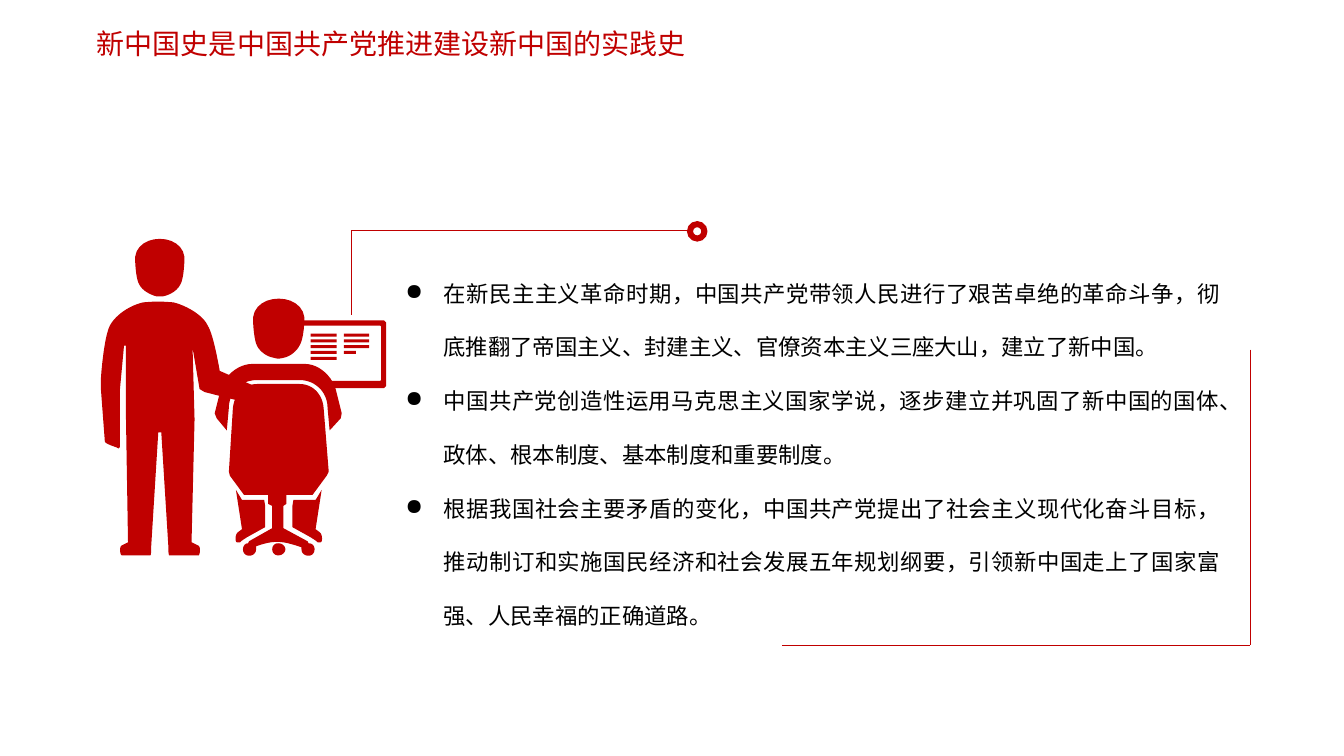
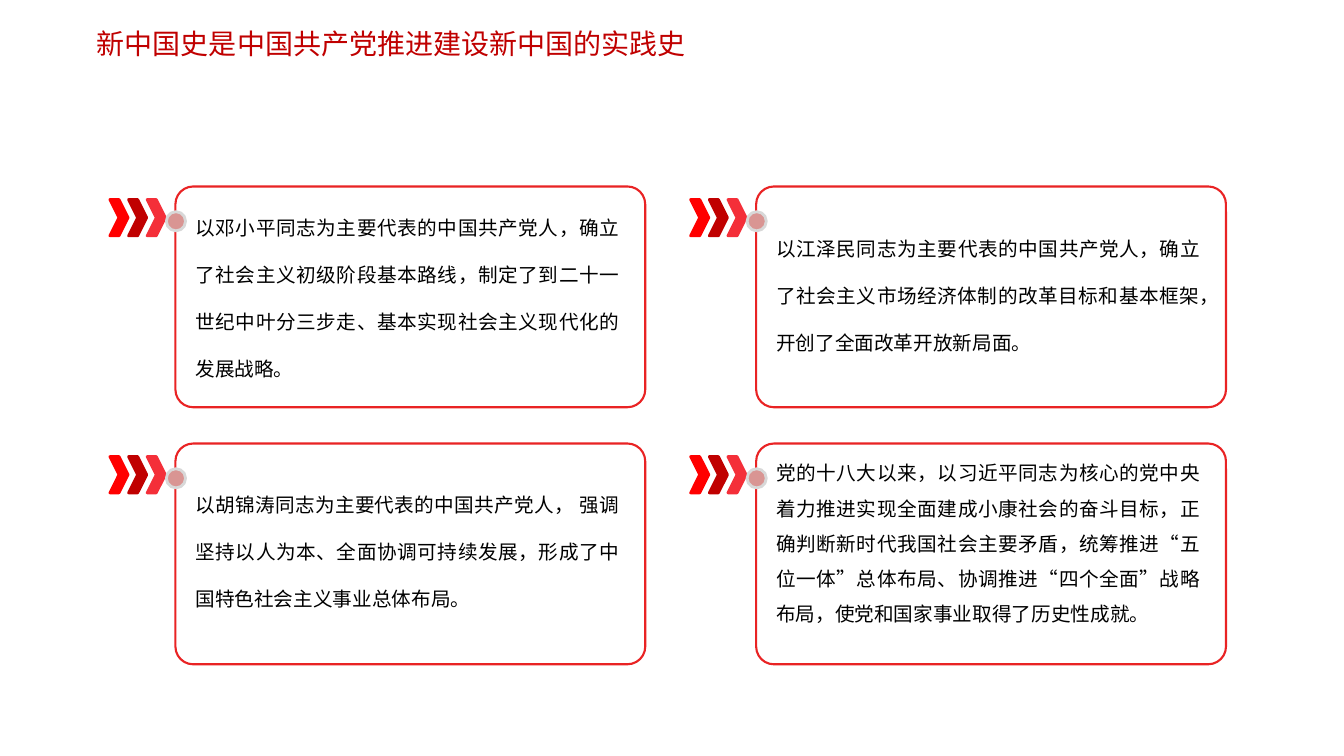
from lxml import etree
from pptx import Presentation
from pptx import util as u
from pptx.dml.color import RGBColor
from pptx.enum import shapes, text
from pptx.oxml import ns

FONT = "Noto Sans CJK SC"
RED, BLACK = "C00000", "000000"
TITLE = "新中国史是中国共产党推进建设新中国的实践史"
KIND = shapes.MSO_SHAPE

POINTS = [
    "在新民主主义革命时期，中国共产党带领人民进行了艰苦卓绝的革命斗争，彻底推翻了帝国主义、封建主义、官僚资本主义三座大山，建立了新中国。",
    "中国共产党创造性运用马克思主义国家学说，逐步建立并巩固了新中国的国体、政体、根本制度、基本制度和重要制度。",
    "根据我国社会主要矛盾的变化，中国共产党提出了社会主义现代化奋斗目标，推动制订和实施国民经济和社会发展五年规划纲要，引领新中国走上了国家富强、人民幸福的正确道路。",
]

CARDS = [
    ("以邓小平同志为主要代表的中国共产党人，确立了社会主义初级阶段基本路线，制定了到二十一世纪中叶分三步走、基本实现社会主义现代化的发展战略。", 0.01, 1.99, 2.0),
    ("以江泽民同志为主要代表的中国共产党人，确立了社会主义市场经济体制的改革目标和基本框架，开创了全面改革开放新局面。", 0.22, 1.51, 2.0),
    ("以胡锦涛同志为主要代表的中国共产党人， 强调坚持以人为本、全面协调可持续发展，形成了中国特色社会主义事业总体布局。", 0.21, 1.51, 2.0),
    ("党的十八大以来，以习近平同志为核心的党中央着力推进实现全面建成小康社会的奋斗目标，正确判断新时代我国社会主要矛盾，统筹推进“五位一体”总体布局、协调推进“四个全面”战略布局，使党和国家事业取得了历史性成就。", 0.01, 1.87, 1.5),
]


def block(x, y, w, h):
    return [(x, y), (x + w, y), (x + w, y + h), (x, y + h)]


def mirror(outline, mid):
    return [tuple(2 * mid - v if i % 2 == 0 else v for i, v in enumerate(step))
            for step in outline]


FRAME = [(190, 87), (281, 87), (283, 89), (283, 152), (281, 154), (217, 154),
         (214, 151, 211, 148, 207, 147), (277, 147), (278, 146), (278, 93),
         (277, 92), (194, 92), (193, 93), (193, 114), (188, 114), (188, 89)]
ROWS = [block(208, 100 + 5.75 * i, 26, 3) for i in range(5)]
ROWS += [block(241, 100 + 5.75 * i, w, 3) for i, w in enumerate((25, 25, 25, 12))]
SCREEN = [FRAME, block(188, 133, 5, 12), *ROWS]

SITTER = [
    [(151, 84), (154, 59, 199, 59, 202, 84), (202, 91, 201, 106, 197, 112),
     (194, 118, 187, 123, 181, 124), (177, 125, 175, 125, 172, 124),
     (165, 123, 158, 118, 155, 112), (152, 106, 151, 91, 151, 84)],
    [(202, 130), (217, 130, 231, 143, 234, 159), (239, 179), (238, 184), (227, 196),
     (225, 174), (225, 158, 213, 146, 197, 146), (155, 146),
     (139, 146, 127, 158, 127, 174), (125, 196), (115, 184), (113, 179), (118, 159),
     (121, 143, 135, 130, 151, 130)],
]

LEG = [(162, 265), (163, 271), (163, 292), (145, 302), (142, 304, 140, 305, 138, 307),
       (135, 307), (133, 307, 133, 299, 136, 297), (140, 294), (134, 255), (140, 265)]
LEGS = [LEG, mirror(LEG, 176.5)]

CHAIR = [
    [(197, 150), (211, 150, 220, 161, 221, 174), (226, 237), (224, 241), (210, 260),
     (184, 260), (184, 269), (181, 271), (181, 293), (205, 306), (206, 308),
     (210, 308, 212, 311, 212, 314), (212, 323, 199, 322, 199, 314), (199, 312),
     (179, 305, 171, 305, 154, 311), (154, 314), (154, 322, 141, 323, 141, 314),
     (141, 311, 143, 308, 146, 308), (147, 306), (170, 293), (170, 271), (166, 269),
     (166, 260), (142, 260), (128, 241), (127, 237), (131, 174),
     (132, 161, 142, 150, 155, 150)],
    [(176, 308), (172, 308, 170, 311, 170, 314), (170, 317, 172, 320, 176, 320),
     (180, 320, 183, 317, 183, 314), (183, 311, 180, 308, 176, 308)],
]

STANDER = [
    [(34, 24), (34, 31, 35, 46, 38, 51), (41, 57, 48, 61, 55, 63),
     (58, 63, 59, 63, 62, 63), (70, 61, 76, 57, 79, 51), (82, 46, 83, 31, 83, 24),
     (80, 0, 37, 0, 34, 24)],
    [(98, 155), (103, 158), (150, 170), (152, 171, 161, 158, 157, 154), (118, 137),
     (115, 121, 111, 100, 106, 92), (101, 81, 84, 72, 72, 69), (58, 68, 55, 68, 42, 69),
     (29, 72, 15, 81, 9, 92), (4, 102, 1, 130, 0, 146), (0, 148, 0, 152, 0, 154),
     (4, 207), (4, 209, 13, 212, 16, 213), (18, 215, 19, 213, 19, 211), (19, 155),
     (23, 112), (25, 112), (25, 185), (27, 307), (21, 310),
     (18, 311, 19, 320, 21, 320), (49, 320), (50, 320, 50, 314, 50, 311), (57, 198),
     (60, 198), (67, 311), (67, 314, 67, 320, 68, 320), (97, 320),
     (98, 320, 100, 311, 96, 310), (90, 307), (93, 185), (91, 114)],
]


def color(value):
    return RGBColor.from_string(value)


def box(*sizes):
    return [u.Inches(v) for v in sizes]


def paint(shape, fill=None, line=None, width=1):
    shape.shadow.inherit = False
    if fill:
        shape.fill.solid()
        shape.fill.fore_color.rgb = color(fill)
    else:
        shape.fill.background()
    if line:
        shape.line.color.rgb = color(line)
        shape.line.width = u.Pt(width)
    else:
        shape.line.fill.background()
    return shape


def add(slide, kind, place, fill=None, line=None, width=1):
    shape = slide.shapes.add_shape(kind, *box(*place))
    return paint(shape, fill, line, width)


def rule(slide, *ends):
    line = slide.shapes.add_connector(shapes.MSO_CONNECTOR.STRAIGHT, *box(*ends))
    line.line.color.rgb = color(RED)
    line.line.width = u.Pt(0.5)
    etree.SubElement(line._element.spPr, ns.qn("a:effectLst"))


def bullet(para):
    props = para._p.get_or_add_pPr()
    props.set("marL", str(u.Inches(0.38)))
    props.set("indent", str(-u.Inches(0.38)))
    etree.SubElement(props, ns.qn("a:buChar")).set("char", "●")


def write(frame, lines, size, ink, gap=1.0, dots=False):
    frame.word_wrap = True
    frame.auto_size = text.MSO_AUTO_SIZE.SHAPE_TO_FIT_TEXT
    frame.vertical_anchor = text.MSO_ANCHOR.TOP
    frame.text = "\n".join(lines)
    for para in frame.paragraphs:
        if dots:
            bullet(para)
        para.alignment = text.PP_ALIGN.JUSTIFY
        para.line_spacing = gap
        for run in para.runs:
            run.font.size = u.Pt(size)
            run.font.color.rgb = color(ink)
            run.font.name = FONT
            east = etree.SubElement(run._r.get_or_add_rPr(), ns.qn("a:ea"))
            east.set("typeface", FONT)


def label(slide, place, lines, size, gap, dots=False):
    frame = slide.shapes.add_textbox(*box(*place)).text_frame
    write(frame, lines, size, BLACK, gap, dots)
    return frame


def start(deck):
    slide = deck.slides.add_slide(deck.slide_layouts[5])
    title = slide.shapes.title
    title.left, title.top, title.width, title.height = box(0.86, 0.21, 6.55, 0.44)
    write(title.text_frame, [TITLE], 20, RED)
    return slide


def trace(outline):
    spots = [outline[0]]
    for step in outline[1:]:
        if len(step) == 2:
            spots.append(step)
            continue
        ax, ay = spots[-1]
        bx, by, cx, cy, dx, dy = step
        for i in range(1, 13):
            t = i / 12
            s = 1 - t
            k = (s ** 3, 3 * s * s * t, 3 * s * t * t, t ** 3)
            spots.append((k[0] * ax + k[1] * bx + k[2] * cx + k[3] * dx,
                          k[0] * ay + k[1] * by + k[2] * cy + k[3] * dy))
    return spots


def figure(slide, x, y):
    for part in (SCREEN, SITTER, LEGS, CHAIR, STANDER):
        pen = None
        for outline in part:
            spots = [box(x + px / 100, y + py / 100) for px, py in trace(outline)]
            if pen is None:
                pen = slide.shapes.build_freeform(*spots[0], scale=1)
            else:
                pen.move_to(*spots[0])
            pen.add_line_segments(spots[1:], close=True)
        paint(pen.convert_to_shape(), RED)


def bracket(slide, x, y, w, h):
    right, base = x + w, y + h
    rule(slide, x, y, x, y + 0.84)
    rule(slide, x, y, x + 3.38, y)
    add(slide, KIND.DONUT, (x + 3.34, y - 0.09, 0.19, 0.19), RED, RED)
    rule(slide, right, y + 1.18, right, base)
    rule(slide, right - 4.64, base, right, base)
    frame = label(slide, (x + 0.47, y + 0.19, 8.23, 3.76), POINTS, 16, 2.0, True)
    frame.margin_left = frame.margin_right = u.Inches(0.07)
    frame.margin_top = frame.margin_bottom = u.Inches(0.03)


def card(slide, x, y, words, drop, tall, gap):
    for i, tint in enumerate(("FF0000", RED, "F42F39")):
        add(slide, KIND.CHEVRON, (x - 0.65 + 0.185 * i, y + 0.13, 0.18, 0.36), tint, tint, 2)
    frame = add(slide, KIND.ROUNDED_RECTANGLE, (x, y, 4.66, 2.19), None, "E92324", 1.5)
    frame.adjustments[0] = 0.08
    add(slide, KIND.FLOWCHART_CONNECTOR, (x - 0.09, y + 0.25, 0.19, 0.19),
        "D99593", "D8D8D8", 2)
    label(slide, (x + 0.1, y + drop, 4.4, tall), [words], 14, gap)


def main():
    deck = Presentation()
    deck.slide_width, deck.slide_height = box(13.33, 7.5)
    slide = start(deck)
    bracket(slide, 3.48, 2.29, 8.92, 4.11)
    figure(slide, 1, 2.31)
    slide = start(deck)
    for i, item in enumerate(CARDS):
        row, col = divmod(i, 2)
        card(slide, 1.74 + 5.76 * col, 1.85 + 2.55 * row, *item)
    deck.save("out.pptx")


if __name__ == "__main__":
    main()
